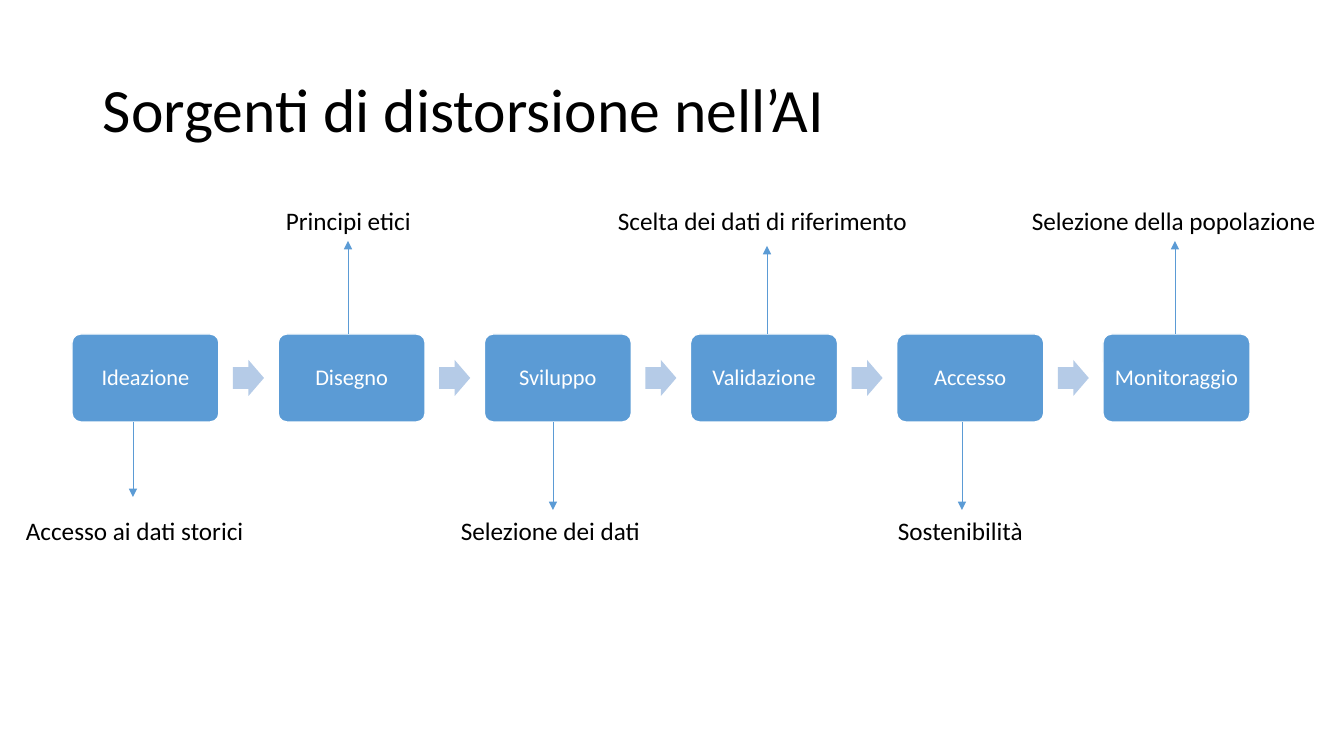
"""Build the slide on sources of distortion along the AI life cycle."""
from lxml import etree
from pptx import Presentation
from pptx import util as u
from pptx.dml.color import RGBColor
from pptx.enum import shapes, text
from pptx.oxml.ns import qn

TITLE = "Sorgenti di distorsione nell’AI"
# stage, label, label left, label width, arrow x, arrow tip y
STAGES = [
    ("Ideazione", "Accesso ai dati storici", 16, 240, 133, 497),
    ("Disegno", "Principi etici", 276, 147, 348, 241),
    ("Sviluppo", "Selezione dei dati", 451, 202, 553, 510),
    ("Validazione", "Scelta dei dati di riferimento", 608, 313, 767, 246),
    ("Accesso", "Sostenibilità", 888, 146, 962, 510),
    ("Monitoraggio", "Selezione della popolazione", 1022, 307, 1175, 241),
]
COLORS = {"box": "5B9BD5", "arrow": "B5CBE7", "white": "FFFFFF", "text": "000000"}
FONT = "Calibri"
FIRST_X, LAST_X = 72, 1103
BOX_Y, BOX_W, BOX_H = 334, 147, 88
ARROW_DX, ARROW_W, ARROW_H = 161, 31, 36
LABEL_ABOVE, LABEL_BELOW, LABEL_H = 200, 510, 40


def px(n):
    return u.Emu(round(n * 914400 / 100.8))


def color(name):
    return RGBColor.from_string(COLORS[name])


def write(sp, words, size, name, align=text.PP_ALIGN.LEFT, spacing=None):
    tf = sp.text_frame
    tf.text = words
    p = tf.paragraphs[0]
    p.alignment = align
    p.line_spacing = spacing
    f = p.runs[0].font
    f.name, f.size, f.color.rgb = FONT, u.Pt(size), color(name)
    return tf


def add_block(s, kind, box, fill, adjustments):
    sp = s.shapes.add_shape(kind, *map(px, box))
    sp.shadow.inherit = False
    sp.fill.solid()
    sp.fill.fore_color.rgb = color(fill)
    sp.line.fill.background()
    for i, value in enumerate(adjustments):
        sp.adjustments[i] = value
    return sp


def add_stage(s, x, name):
    sp = add_block(s, shapes.MSO_SHAPE.ROUNDED_RECTANGLE,
                   (x, BOX_Y, BOX_W, BOX_H), "box", [0.1])
    sp.line.color.rgb = color("white")
    sp.line.width = u.Pt(1)
    tf = write(sp, name, 16, "white", text.PP_ALIGN.CENTER, 0.9)
    tf.vertical_anchor = text.MSO_ANCHOR.MIDDLE
    tf.word_wrap = True
    tf.margin_left = tf.margin_right = tf.margin_top = tf.margin_bottom = px(7)


def add_label(s, words, x, y, w):
    sp = s.shapes.add_textbox(*map(px, (x, y, w, LABEL_H)))
    tf = write(sp, words, 18, "text")
    tf.word_wrap = False
    tf.auto_size = text.MSO_AUTO_SIZE.SHAPE_TO_FIT_TEXT


def add_pointer(s, x, start, tip):
    c = s.shapes.add_connector(shapes.MSO_CONNECTOR.STRAIGHT,
                               px(x), px(start), px(x), px(tip))
    c.line.color.rgb = color("box")
    c.line.width = u.Pt(0.5)
    etree.SubElement(c.line._get_or_add_ln(), qn("a:tailEnd"), type="triangle")
    etree.SubElement(c._element.spPr, qn("a:effectLst"))


def main():
    prs = Presentation()
    prs.slide_width, prs.slide_height = px(1344), px(756)
    s = prs.slides.add_slide(prs.slide_layouts[6])

    title = s.shapes.add_textbox(*map(px, (93, 40, 1159, 146)))
    tf = write(title, TITLE, 44, "text", spacing=0.9)
    tf.word_wrap = True
    tf.vertical_anchor = text.MSO_ANCHOR.MIDDLE

    pitch = (LAST_X - FIRST_X) / (len(STAGES) - 1)
    for i, (name, label, label_x, label_w, pointer_x, tip) in enumerate(STAGES):
        x = FIRST_X + i * pitch
        add_stage(s, x, name)
        if i < len(STAGES) - 1:
            arrow_y = BOX_Y + (BOX_H - ARROW_H) / 2
            add_block(s, shapes.MSO_SHAPE.RIGHT_ARROW,
                      (x + ARROW_DX, arrow_y, ARROW_W, ARROW_H), "arrow", [0.6, 0.5])
        above = tip < BOX_Y
        add_pointer(s, pointer_x, BOX_Y if above else BOX_Y + BOX_H, tip)
        add_label(s, label, label_x, LABEL_ABOVE if above else LABEL_BELOW, label_w)

    prs.save("out.pptx")


if __name__ == "__main__":
    main()
